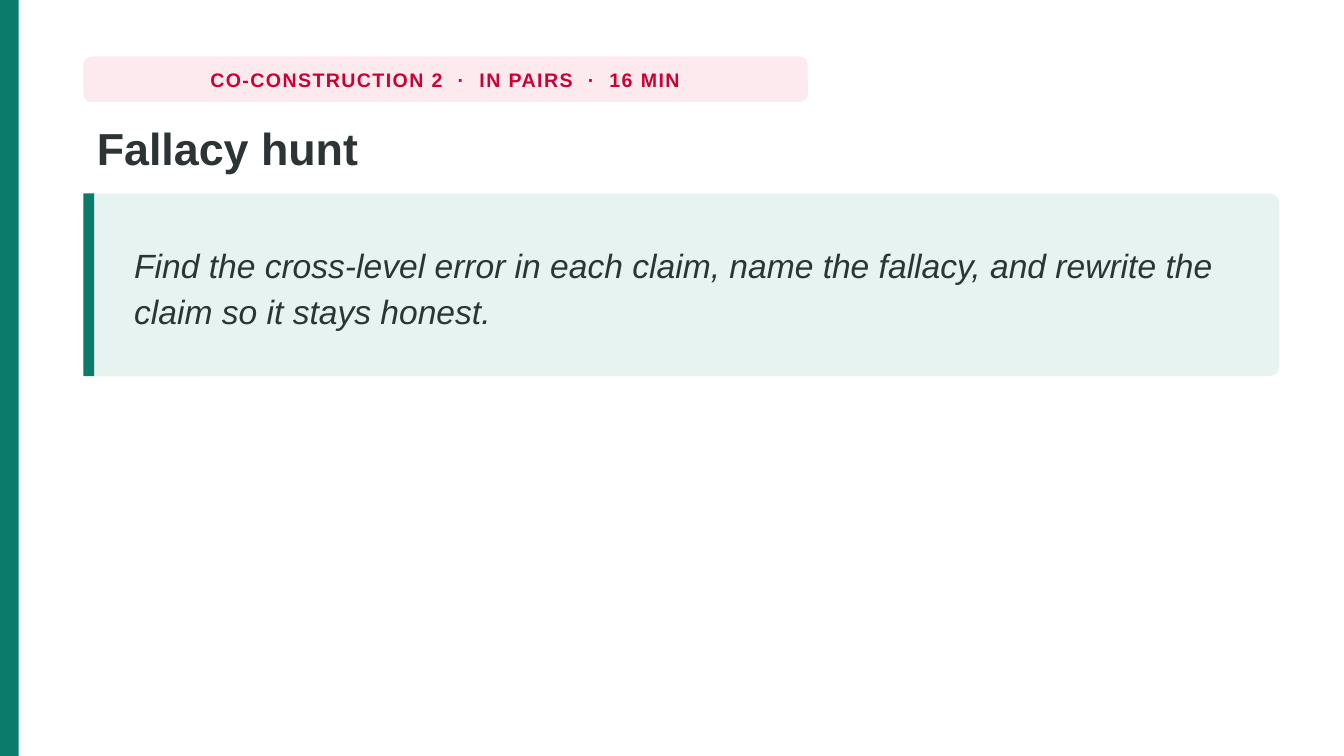
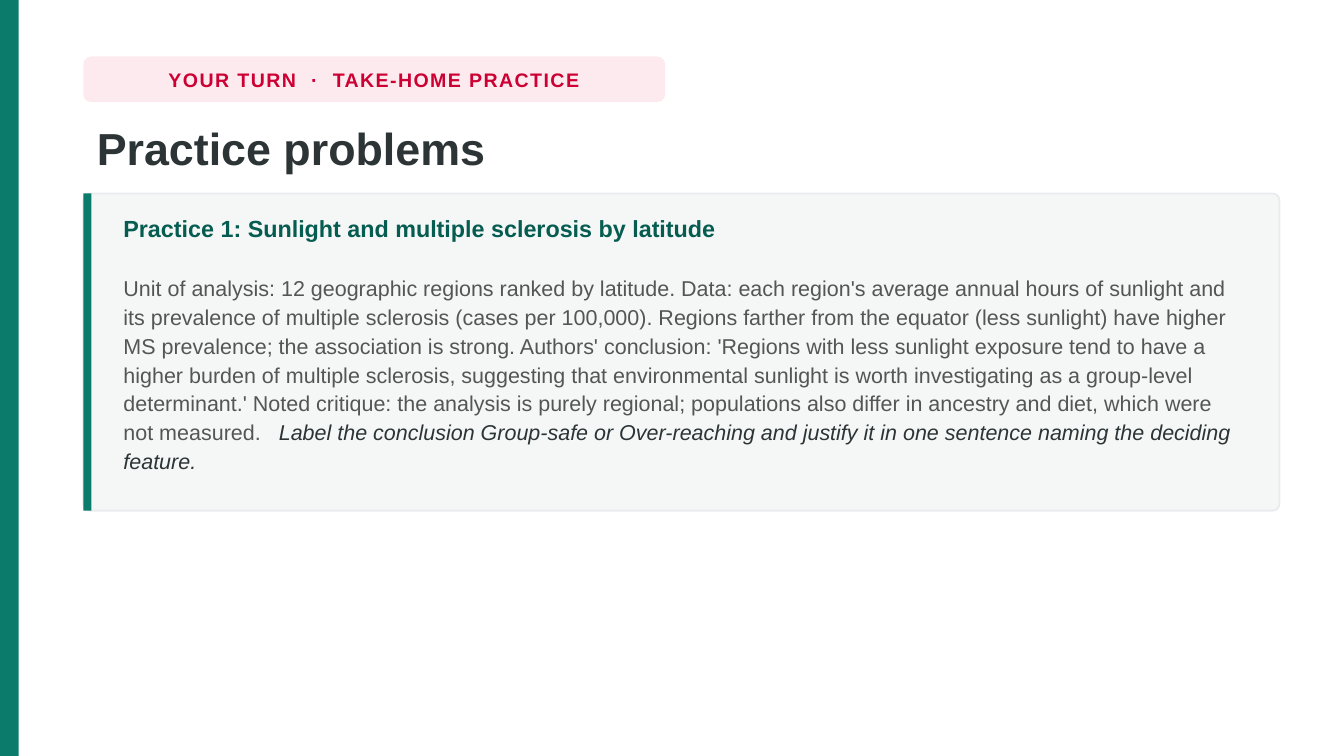
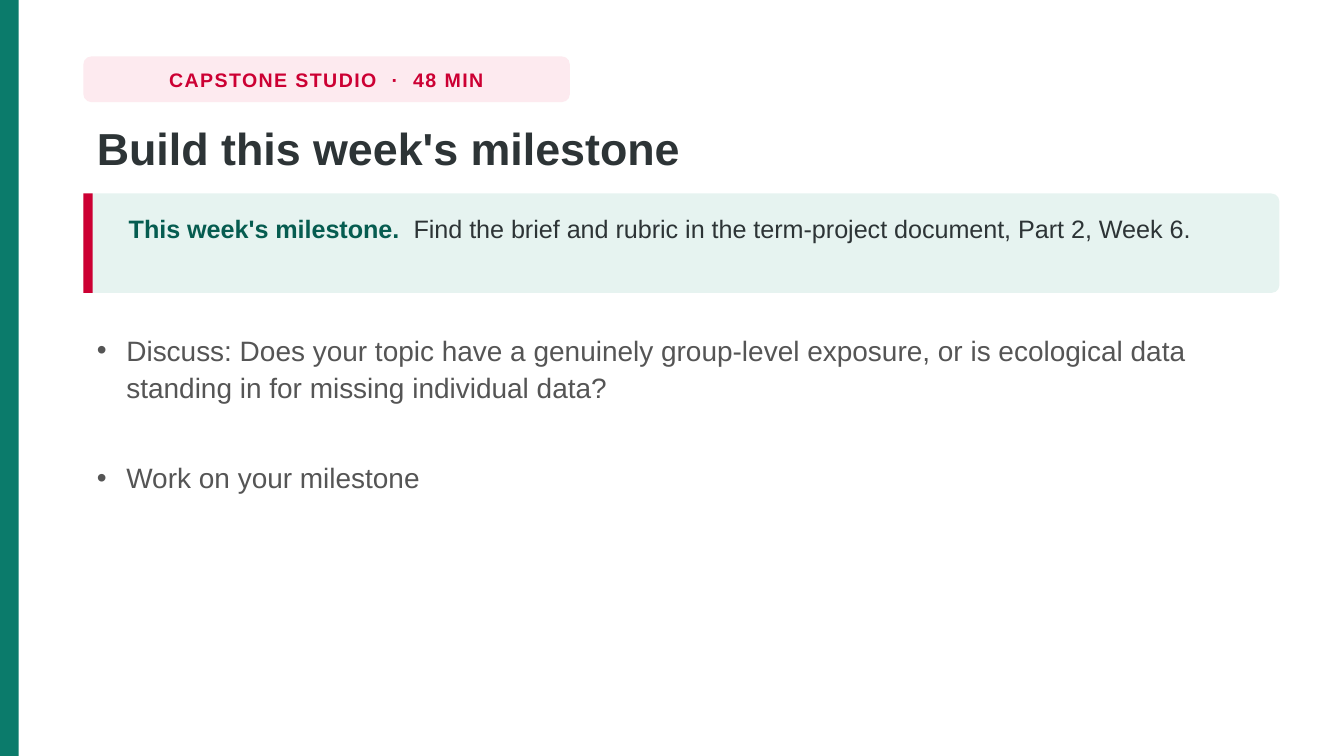
from lxml import etree
from pptx import Presentation
from pptx.dml.color import RGBColor
from pptx.enum import shapes, text
from pptx.oxml import ns
from pptx.util import Pt

COLORS = {
    "green": "0B7B6B", "deep_green": "065C50", "mint": "E6F3F0",
    "red": "CC0033", "blush": "FDEAEF", "ink": "2D3436",
    "gray": "555555", "mist": "F4F7F6", "edge": "E8ECEE",
}
FONT = "Arial"
WIDTH, HEIGHT = 720, 405
LEFT, CONTENT_WIDTH, CARD_TOP = 44.64, 640.8, 103.68
TITLE_ONLY, TITLE_AND_BODY = 5, 1


def rgb(color):
    return RGBColor.from_string(COLORS[color])


def apply(target, values):
    for attribute, value in values.items():
        setattr(target, attribute, value)


def place(item, left, top, width, height):
    apply(item, {"left": Pt(left), "top": Pt(top), "width": Pt(width), "height": Pt(height)})


def set_frame(item, anchor=text.MSO_ANCHOR.TOP, wrap=True):
    frame = item.text_frame
    apply(frame, {"word_wrap": wrap, "auto_size": text.MSO_AUTO_SIZE.NONE,
                  "vertical_anchor": anchor})
    return frame


def add_run(paragraph, words, size, color, **look):
    run = paragraph.add_run()
    run.text = words
    apply(run.font, {"name": FONT, "size": Pt(size), "bold": False, **look})
    run.font.color.rgb = rgb(color)
    return run


def set_paragraph(paragraph, spacing, before=0, align=text.PP_ALIGN.LEFT):
    apply(paragraph, {"line_spacing": spacing, "space_before": Pt(before), "alignment": align})
    return paragraph


# Blocks of colour
def add_block(slide, left, top, width, height, fill, radius=0, edge=None):
    kind = shapes.MSO_SHAPE.ROUNDED_RECTANGLE if radius else shapes.MSO_SHAPE.RECTANGLE
    block = slide.shapes.add_shape(kind, Pt(left), Pt(top), Pt(width), Pt(height))
    block.shadow.inherit = False
    if radius:
        block.adjustments[0] = radius / min(width, height)
    block.fill.solid()
    block.fill.fore_color.rgb = rgb(fill)
    if edge:
        block.line.color.rgb = rgb(edge)
        block.line.width = Pt(1)
    else:
        block.line.fill.background()
    return block


def add_card(slide, height, radius, bar_width, fill="mint", bar="green", edge=None):
    add_block(slide, LEFT, CARD_TOP, CONTENT_WIDTH, height, fill, radius, edge)
    add_block(slide, LEFT, CARD_TOP, bar_width, height, bar)


# Text elements
def add_card_text(slide, left, top, width, height, anchor=text.MSO_ANCHOR.TOP):
    box = slide.shapes.add_textbox(Pt(left), Pt(top), Pt(width), Pt(height))
    return set_frame(box, anchor)


def add_pill(slide, label, width):
    pill = add_block(slide, LEFT, 30.24, width, 24.48, "blush", radius=4.32)
    frame = set_frame(pill, text.MSO_ANCHOR.MIDDLE, wrap=False)
    paragraph = set_paragraph(frame.paragraphs[0], 1.0, align=text.PP_ALIGN.CENTER)
    run = add_run(paragraph, label, 10.5, "red", bold=True)
    run.font._element.set("spc", "80")


def set_title(slide, words):
    title = slide.shapes.title
    place(title, LEFT, 60.48, CONTENT_WIDTH, 40.32)
    paragraph = set_paragraph(set_frame(title).paragraphs[0], 1.02)
    add_run(paragraph, words, 24, "ink", bold=True)


def set_bullets(slide, items, top, height, gap):
    body = slide.placeholders[1]
    place(body, LEFT, top, CONTENT_WIDTH, height)
    frame = set_frame(body)
    for index, item in enumerate(items):
        paragraph = frame.add_paragraph() if index else frame.paragraphs[0]
        properties = paragraph._p.get_or_add_pPr()
        properties.set("marL", str(Pt(15.84)))
        properties.set("indent", str(-Pt(15.84)))
        etree.SubElement(properties, ns.qn("a:buChar")).set("char", "•")
        set_paragraph(paragraph, 1.12, before=gap if index else 0)
        add_run(paragraph, item, 15, "gray")


def add_lesson_slide(deck, layout, label, pill_width, title):
    slide = deck.slides.add_slide(deck.slide_layouts[layout])
    add_block(slide, 0, 0, 10.08, HEIGHT, "green")
    add_pill(slide, label, pill_width)
    set_title(slide, title)
    return slide


# Slides
def build_fallacy_hunt(deck):
    slide = add_lesson_slide(deck, TITLE_ONLY, "CO-CONSTRUCTION 2  ·  IN PAIRS  ·  16 MIN",
                             388.08, "Fallacy hunt")
    add_card(slide, height=97.92, radius=5, bar_width=5.76)
    task = add_card_text(slide, 64.8, 107.28, 601.2, 90.72, text.MSO_ANCHOR.MIDDLE)
    add_run(set_paragraph(task.paragraphs[0], 1.16),
            "Find the cross-level error in each claim, name the fallacy, and rewrite "
            "the claim so it stays honest.", 18, "ink", italic=True)


def build_practice(deck):
    slide = add_lesson_slide(deck, TITLE_ONLY, "YOUR TURN  ·  TAKE-HOME PRACTICE",
                             311.76, "Practice problems")
    add_card(slide, height=169.92, radius=3.6, bar_width=4.32, fill="mist", edge="edge")
    problem = add_card_text(slide, 59.04, 109.44, 610.56, 158.4)
    add_run(set_paragraph(problem.paragraphs[0], 1.12),
            "Practice 1: Sunlight and multiple sclerosis by latitude",
            12.5, "deep_green", bold=True)
    study = set_paragraph(problem.add_paragraph(), 1.12, before=16)
    add_run(study,
            "Unit of analysis: 12 geographic regions ranked by latitude. Data: each region's "
            "average annual hours of sunlight and its prevalence of multiple sclerosis (cases "
            "per 100,000). Regions farther from the equator (less sunlight) have higher MS "
            "prevalence; the association is strong. Authors' conclusion: 'Regions with less "
            "sunlight exposure tend to have a higher burden of multiple sclerosis, suggesting "
            "that environmental sunlight is worth investigating as a group-level determinant.' "
            "Noted critique: the analysis is purely regional; populations also differ in "
            "ancestry and diet, which were not measured.   ", 11.5, "gray")
    add_run(study,
            "Label the conclusion Group-safe or Over-reaching and justify it in one sentence "
            "naming the deciding feature.", 11.5, "ink", italic=True)


def build_milestone(deck):
    slide = add_lesson_slide(deck, TITLE_AND_BODY, "CAPSTONE STUDIO  ·  48 MIN",
                             260.64, "Build this week's milestone")
    add_card(slide, height=53.28, radius=4.32, bar_width=5.04, bar="red")
    brief = add_card_text(slide, 61.92, 108.72, 604.8, 43.2)
    milestone = set_paragraph(brief.paragraphs[0], 1.14)
    add_run(milestone, "This week's milestone.  ", 13.5, "deep_green", bold=True)
    add_run(milestone, "Find the brief and rubric in the term-project document, Part 2, Week 6.",
            13.5, "ink")
    set_bullets(slide, [
        "Discuss: Does your topic have a genuinely group-level exposure, or is ecological "
        "data standing in for missing individual data?",
        "Work on your milestone",
    ], top=172.8, height=95, gap=28)


def main():
    deck = Presentation()
    apply(deck, {"slide_width": Pt(WIDTH), "slide_height": Pt(HEIGHT)})
    for build in (build_fallacy_hunt, build_practice, build_milestone):
        build(deck)
    deck.save("out.pptx")


if __name__ == "__main__":
    main()
